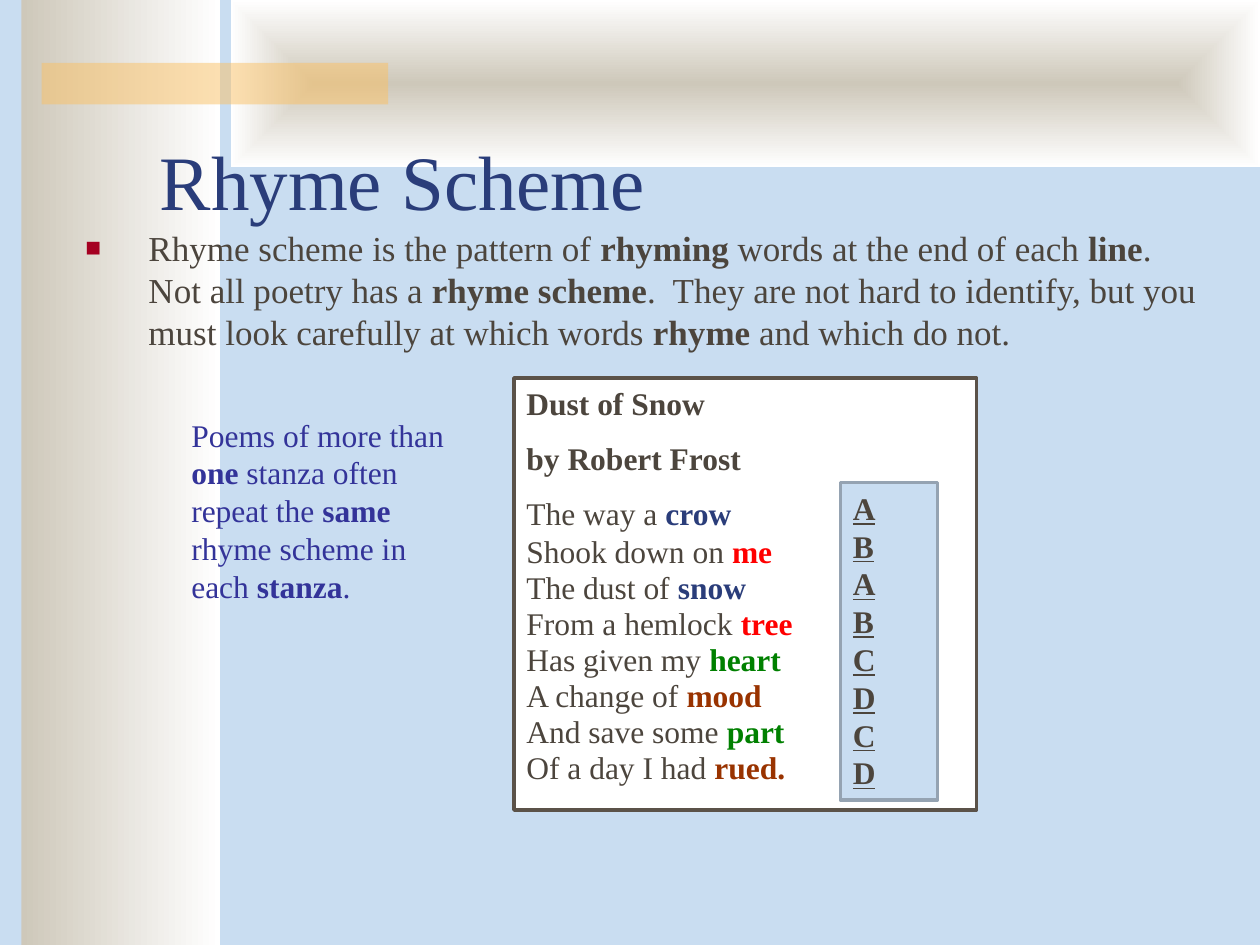
"""Build the Rhyme Scheme slide with Frost's poem and its rhyme letters."""
from lxml.etree import SubElement
from pptx import Presentation
from pptx.dml.color import RGBColor
from pptx.enum.shapes import MSO_SHAPE
from pptx.enum.text import MSO_ANCHOR as Anchor, PP_ALIGN as Align
from pptx.oxml.ns import qn
from pptx.util import Inches, Pt

COLORS = {
    "sky": "C9DDF1", "stone": "CEC8BA", "white": "FFFFFF", "gold": "FAC164",
    "navy": "2A3D7A", "text": "4C453D", "bullet": "A50021", "indigo": "333399",
    "poem_edge": "5B5249", "scheme_edge": "95A3B2",
    "red": "FF0000", "green": "008000", "brown": "993300",
}
FONT = "Times New Roman"
WIDTH, HEIGHT = 10, 7.5

TITLE = "Rhyme Scheme"
DEFINITION = (
    "Rhyme scheme is the pattern of *rhyming* words at the end of each* line*.  "
    "Not all poetry has a *rhyme scheme*.  They are not hard to identify, but you "
    "must look carefully at which words *rhyme* and which do not."
)
STANZA_NOTE = (
    "Poems of more than *one* stanza often repeat the *same* rhyme scheme "
    "in each *stanza*."
)
POEM_HEADING = ["*Dust of Snow*", "*by Robert Frost*"]
POEM = [
    ("The way a *crow*", "A"),
    ("Shook down on *me*", "B"),
    ("The dust of *snow*", "A"),
    ("From a hemlock *tree*", "B"),
    ("Has given my *heart*", "C"),
    ("A change of *mood*", "D"),
    ("And save some *part*", "C"),
    ("Of a day I had *rued.*", "D"),
]
RHYME_COLORS = {"A": "navy", "B": "red", "C": "green", "D": "brown"}


def rgb(name):
    return RGBColor.from_string(COLORS[name])


def add_box(slide, place, fill=None, edge=None):
    box = slide.shapes.add_shape(MSO_SHAPE.RECTANGLE, *map(Inches, place))
    box.shadow.inherit = False
    if fill:
        box.fill.solid()
        box.fill.fore_color.rgb = rgb(fill)
    if edge:
        box.line.color.rgb = rgb(edge)
        box.line.width = Pt(2)
    else:
        box.line.fill.background()
    return box


def add_fade(slide, place, from_center=False):
    band = add_box(slide, place)
    band.fill.gradient()
    band.fill.gradient_angle = 0
    for stop, name in zip(band.fill.gradient_stops, ("stone", "white")):
        stop.color.rgb = rgb(name)
    if from_center:
        gradient = band._element.spPr.find(qn("a:gradFill"))
        gradient.remove(gradient.find(qn("a:lin")))
        shade = SubElement(gradient, qn("a:path"), path="shape")
        SubElement(shade, qn("a:fillToRect"), dict.fromkeys("ltrb", "50000"))


def add_text(slide, place, anchor=Anchor.TOP):
    frame = slide.shapes.add_textbox(*map(Inches, place)).text_frame
    return prepare(frame, anchor)


def prepare(frame, anchor=Anchor.TOP):
    frame.word_wrap = True
    frame.vertical_anchor = anchor
    return frame


def write(paragraph, marked, size, color="text", bold_color=None):
    paragraph.alignment = Align.LEFT
    paragraph.font.name = FONT
    paragraph.font.size = Pt(size)
    paragraph.font.color.rgb = rgb(color)
    for index, part in enumerate(marked.split("*")):
        if part:
            run = paragraph.add_run()
            run.text = part
            if index % 2:
                run.font.bold = True
                if bold_color:
                    run.font.color.rgb = rgb(bold_color)


def next_paragraph(frame, index):
    return frame.add_paragraph() if index else frame.paragraphs[0]


def add_square_bullet(paragraph):
    props = paragraph._p.get_or_add_pPr()
    props.set("marL", str(Inches(0.5)))
    props.set("indent", str(-Inches(0.5)))
    color = SubElement(props, qn("a:buClr"))
    SubElement(color, qn("a:srgbClr"), val=COLORS["bullet"])
    SubElement(props, qn("a:buSzPct"), val="75000")
    SubElement(props, qn("a:buFont"), typeface=FONT)
    SubElement(props, qn("a:buChar"), char="■")


def add_background(slide):
    slide.background.fill.solid()
    slide.background.fill.fore_color.rgb = rgb("sky")
    add_fade(slide, (0.17, 0, 1.58, HEIGHT))
    add_fade(slide, (1.83, 0, WIDTH - 1.83, 1.33), from_center=True)
    stripe = add_box(slide, (0.33, 0.5, 2.75, 0.33), "gold")
    tint = stripe._element.spPr.find(qn("a:solidFill"))[0]
    SubElement(tint, qn("a:alpha"), val="50000")


def add_poem(slide):
    poem = prepare(add_box(slide, (4.08, 3, 3.67, 3.43), "white", "poem_edge").text_frame)
    lines = [(heading, None) for heading in POEM_HEADING] + POEM
    for index, (line, rhyme) in enumerate(lines):
        paragraph = next_paragraph(poem, index)
        if index:
            paragraph.space_before = Pt(9.75)
        if index > len(POEM_HEADING):
            paragraph.line_spacing = 0.5
        write(paragraph, line, 18, bold_color=RHYME_COLORS.get(rhyme))

    scheme = prepare(add_box(slide, (6.67, 3.83, 0.77, 2.52), "sky", "scheme_edge").text_frame)
    for index, (_, rhyme) in enumerate(POEM):
        paragraph = next_paragraph(scheme, index)
        write(paragraph, f"*{rhyme}*", 18)
        paragraph.runs[0].font.underline = True


def main():
    deck = Presentation()
    deck.slide_width, deck.slide_height = Inches(WIDTH), Inches(HEIGHT)
    slide = deck.slides.add_slide(deck.slide_layouts[6])
    add_background(slide)

    title = add_text(slide, (1.17, 0.92, 8.5, 0.92), Anchor.BOTTOM)
    write(title.paragraphs[0], TITLE, 44, "navy")

    definition = add_text(slide, (0.58, 1.75, 9.08, 1.25)).paragraphs[0]
    add_square_bullet(definition)
    write(definition, DEFINITION, 20)

    note = add_text(slide, (1.42, 3.25, 2.25, 3.3))
    write(note.paragraphs[0], STANZA_NOTE, 18, "indigo")

    add_poem(slide)
    deck.save("out.pptx")


if __name__ == "__main__":
    main()
